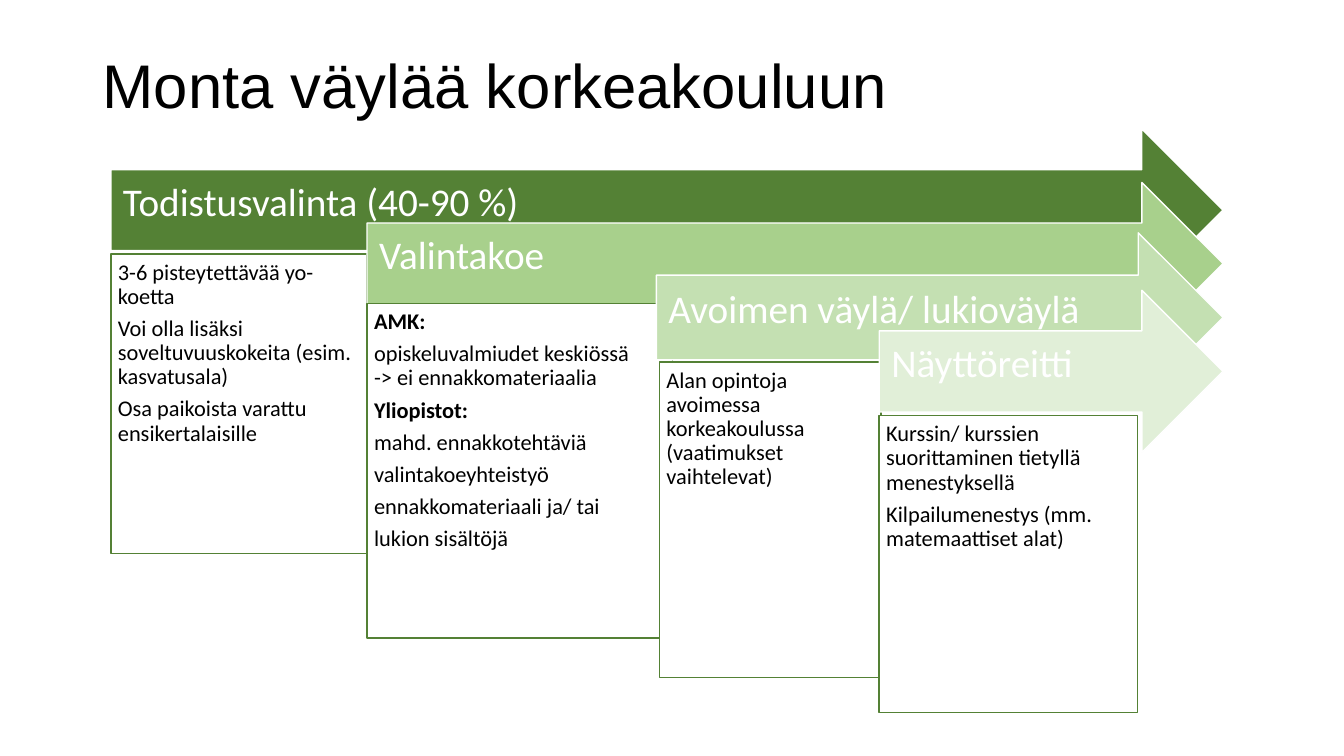
from dataclasses import dataclass

from pptx import Presentation
from pptx import util as u
from pptx.dml.color import RGBColor
from pptx.enum import shapes, text

WHITE = RGBColor(0xFF, 0xFF, 0xFF)
BLACK = RGBColor(0x00, 0x00, 0x00)
GREEN = RGBColor(0x54, 0x81, 0x35)
MID_GREEN = RGBColor(0xA8, 0xD0, 0x8C)
LIGHT_GREEN = RGBColor(0xC4, 0xE0, 0xB2)
PALE_GREEN = RGBColor(0xE1, 0xEF, 0xD8)

ARROW_TIP = 12.13
ARROW_INSETS = (0.12, 0.12, 0.28, 0.25)
BOX_INSETS = (0.07, 0.07, 0.07, 0.07)


@dataclass
class Line:
    text: str
    bold: bool = False


@dataclass
class Route:
    name: str
    color: RGBColor
    left: float
    top: float
    height: float
    box: tuple[float, float, float, float]
    lines: list[Line]


ROUTES = [
    Route("Todistusvalinta (40-90 %)", GREEN, 1.1, 1.28, 1.61, (1.1, 2.52, 2.54, 2.97), [
        Line("3-6 pisteytettävää yo-koetta"),
        Line("Voi olla lisäksi soveltuvuuskokeita (esim. kasvatusala)"),
        Line("Osa paikoista varattu ensikertalaisille"),
    ]),
    Route("Valintakoe", MID_GREEN, 3.64, 1.81, 1.61, (3.64, 3.01, 3.03, 3.32), [
        Line("AMK:", True),
        Line("opiskeluvalmiudet keskiössä\n-> ei ennakkomateriaalia"),
        Line("Yliopistot:", True),
        Line("mahd. ennakkotehtäviä"),
        Line("valintakoeyhteistyö"),
        Line("ennakkomateriaali ja/ tai"),
        Line("lukion sisältöjä"),
    ]),
    Route("Avoimen väylä/ lukioväylä", LIGHT_GREEN, 6.51, 2.31, 1.68, (6.54, 3.59, 2.2, 3.13), [
        Line("Alan opintoja avoimessa korkeakoulussa (vaatimukset vaihtelevat)"),
    ]),
    Route("Näyttöreitti", PALE_GREEN, 8.72, 2.88, 1.61, (8.72, 4.12, 2.56, 2.95), [
        Line("Kurssin/ kurssien suorittaminen tietyllä menestyksellä"),
        Line("Kilpailumenestys (mm. matemaattiset alat)"),
    ]),
]


def write(tf, lines: list[Line], size: float, color: RGBColor, font: str,
          anchor: text.MSO_ANCHOR, insets: tuple[float, float, float, float]) -> None:
    tf.word_wrap = True
    tf.vertical_anchor = anchor
    tf.margin_left, tf.margin_top, tf.margin_right, tf.margin_bottom = map(u.Inches, insets)
    for i, line in enumerate(lines):
        p = tf.add_paragraph() if i else tf.paragraphs[0]
        p.alignment = text.PP_ALIGN.LEFT
        p.line_spacing = 0.9
        if i:
            p.space_before = u.Pt(5.6)
        for j, part in enumerate(line.text.split("\n")):
            if j:
                p.add_line_break()
            r = p.add_run()
            r.text = part
            r.font.name = font
            r.font.size = u.Pt(size)
            r.font.bold = line.bold
            r.font.color.rgb = color


def add_panel(s, kind: shapes.MSO_SHAPE, at: tuple[float, float, float, float],
              fill: RGBColor, line: RGBColor):
    sp = s.shapes.add_shape(kind, *map(u.Inches, at))
    sp.shadow.inherit = False
    sp.fill.solid()
    sp.fill.fore_color.rgb = fill
    sp.line.color.rgb = line
    sp.line.width = u.Pt(1)
    return sp


def add_route(s, route: Route) -> None:
    at = (route.left, route.top, ARROW_TIP - route.left, route.height)
    arrow = add_panel(s, shapes.MSO_SHAPE.RIGHT_ARROW, at, route.color, WHITE)
    write(arrow.text_frame, [Line(route.name)], 28, WHITE, "Calibri",
          text.MSO_ANCHOR.MIDDLE, ARROW_INSETS)
    box = add_panel(s, shapes.MSO_SHAPE.RECTANGLE, route.box, WHITE, GREEN)
    write(box.text_frame, route.lines, 16, BLACK, "Calibri",
          text.MSO_ANCHOR.TOP, BOX_INSETS)


def main() -> None:
    prs = Presentation()
    prs.slide_width, prs.slide_height = u.Inches(13.33), u.Inches(7.5)
    s = prs.slides.add_slide(prs.slide_layouts[6])
    title = s.shapes.add_textbox(*map(u.Inches, (0.92, 0.4, 11.5, 0.96)))
    write(title.text_frame, [Line("Monta väylää korkeakouluun")], 44, BLACK, "Arial",
          text.MSO_ANCHOR.MIDDLE, (0.1, 0.05, 0.1, 0.05))
    for route in ROUTES:
        add_route(s, route)
    prs.save("out.pptx")


if __name__ == "__main__":
    main()
